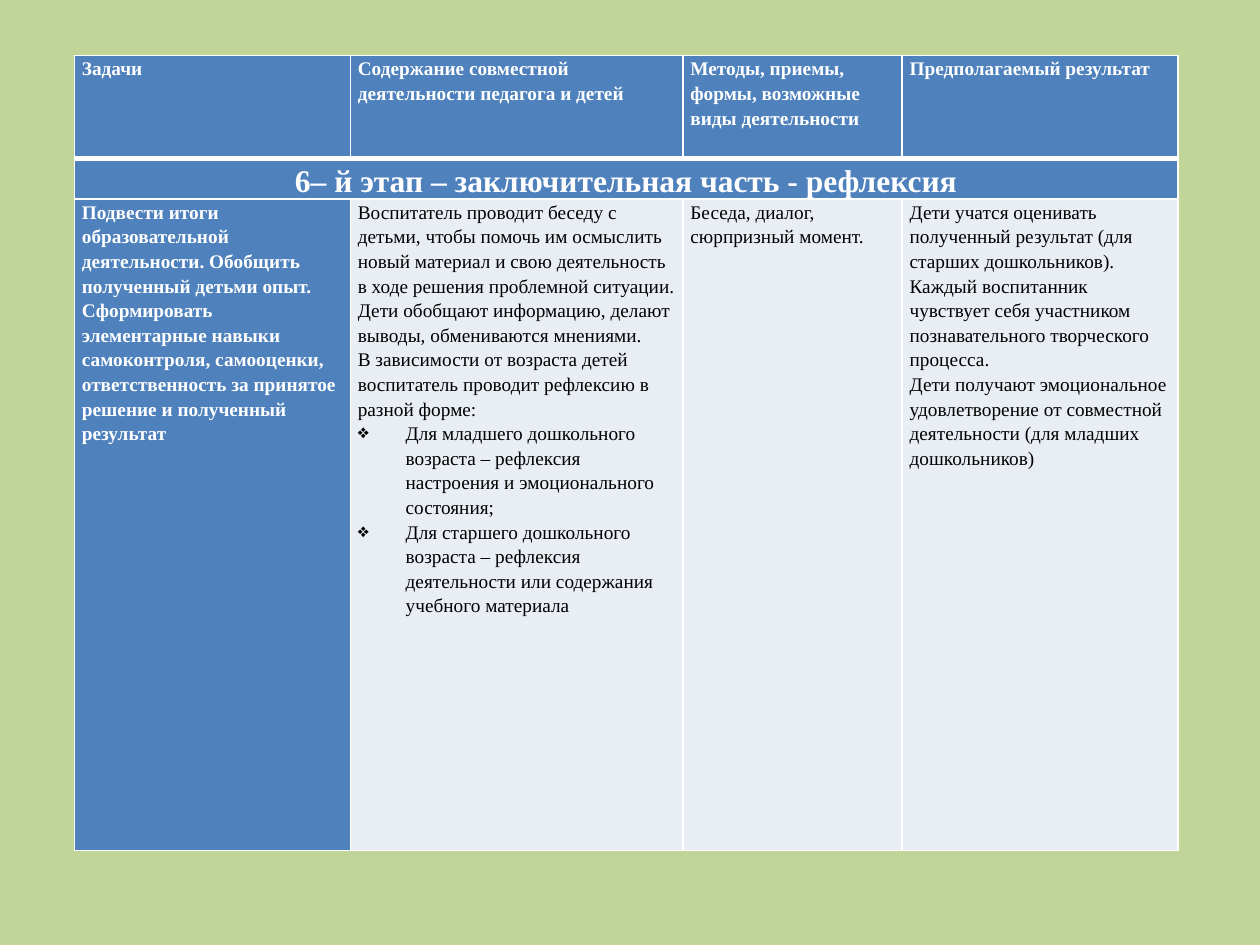
import pptx
import pptx.util
import pptx.dml.color
import pptx.enum.text
import pptx.oxml
import pptx.oxml.ns
import lxml.etree

Inches = pptx.util.Inches
Pt = pptx.util.Pt
RGBColor = pptx.dml.color.RGBColor
qn = pptx.oxml.ns.qn

GREEN = RGBColor(0xC1, 0xD5, 0x98)
BLUE = RGBColor(0x4F, 0x81, 0xBD)
PALE = RGBColor(0xE9, 0xED, 0xF4)
WHITE = RGBColor(0xFF, 0xFF, 0xFF)
BLACK = RGBColor(0x00, 0x00, 0x00)

FONT = "Times New Roman"
BULLET = "❖"
WIDTHS = [2.19, 2.64, 1.74, 2.19]
HEIGHTS = [0.82, 0.27, 5.17]
ROWS = [
    [
        ["Задачи"],
        ["Содержание совместной деятельности педагога и детей"],
        ["Методы, приемы, формы, возможные виды деятельности"],
        ["Предполагаемый результат"],
    ],
    [["6– й этап – заключительная часть - рефлексия"], [], [], []],
    [
        ["Подвести итоги образовательной деятельности. Обобщить полученный "
         "детьми опыт. Сформировать элементарные навыки самоконтроля, "
         "самооценки, ответственность за принятое решение и полученный результат"],
        ["Воспитатель проводит беседу с детьми, чтобы помочь им осмыслить новый "
         "материал и свою деятельность в ходе решения проблемной ситуации.",
         "Дети обобщают информацию, делают выводы, обмениваются мнениями.",
         "В зависимости от возраста детей воспитатель проводит рефлексию в "
         "разной форме:",
         BULLET + "Для младшего дошкольного возраста – рефлексия настроения и "
         "эмоционального состояния;",
         BULLET + "Для старшего дошкольного возраста – рефлексия деятельности "
         "или содержания учебного материала"],
        ["Беседа, диалог, сюрпризный момент."],
        ["Дети учатся оценивать полученный результат (для старших дошкольников).",
         "Каждый воспитанник чувствует себя участником познавательного "
         "творческого процесса.",
         "Дети получают эмоциональное удовлетворение от совместной деятельности "
         "(для младших дошкольников)"],
    ],
]


def border(cell, side, width):
    props = cell._tc.get_or_add_tcPr()
    line = lxml.etree.SubElement(props, qn("a:ln" + side), w=str(Pt(width)))
    fill = lxml.etree.SubElement(line, qn("a:solidFill"))
    lxml.etree.SubElement(fill, qn("a:srgbClr"), val=str(WHITE))


def bullet(para):
    props = para._p.get_or_add_pPr()
    props.set("marL", str(Inches(0.38)))
    props.set("indent", str(Inches(-0.38)))
    lxml.etree.SubElement(props, qn("a:buChar"), char=BULLET)


deck = pptx.Presentation()
deck.slide_width = Inches(10)
deck.slide_height = Inches(7.5)
slide = deck.slides.add_slide(deck.slide_layouts[6])
slide.background.fill.solid()
slide.background.fill.fore_color.rgb = GREEN

frame = slide.shapes.add_table(
    len(HEIGHTS), len(WIDTHS), Inches(0.59), Inches(0.44),
    Inches(sum(WIDTHS)), Inches(sum(HEIGHTS)))
table = frame.table
table.horz_banding = False
for column, width in zip(table.columns, WIDTHS):
    column.width = Inches(width)
for row, height in zip(table.rows, HEIGHTS):
    row.height = Inches(height)
table.cell(1, 0).merge(table.cell(1, 3))

for r, row in enumerate(ROWS):
    for c, lines in enumerate(row):
        cell = table.cell(r, c)
        strong = r < 2 or c == 0
        cell.margin_left = cell.margin_right = Inches(0.06)
        cell.margin_top = cell.margin_bottom = 0
        for side in "LRTB":
            thick = (r, side) in [(0, "B"), (1, "T")]
            border(cell, side, 3 if thick else 1)
        cell.fill.solid()
        cell.fill.fore_color.rgb = BLUE if strong else PALE
        if not lines:
            continue
        cell.text_frame.text = "\n".join(line.lstrip(BULLET) for line in lines)
        for para, line in zip(cell.text_frame.paragraphs, lines):
            para.line_spacing = 1.15
            if r == 1:
                para.alignment = pptx.enum.text.PP_ALIGN.CENTER
            if line.startswith(BULLET):
                bullet(para)
            font = para.runs[0].font
            font.name = FONT
            font.size = Pt(18 if r == 1 else 11)
            font.bold = strong
            font.color.rgb = WHITE if strong else BLACK

deck.save("out.pptx")
